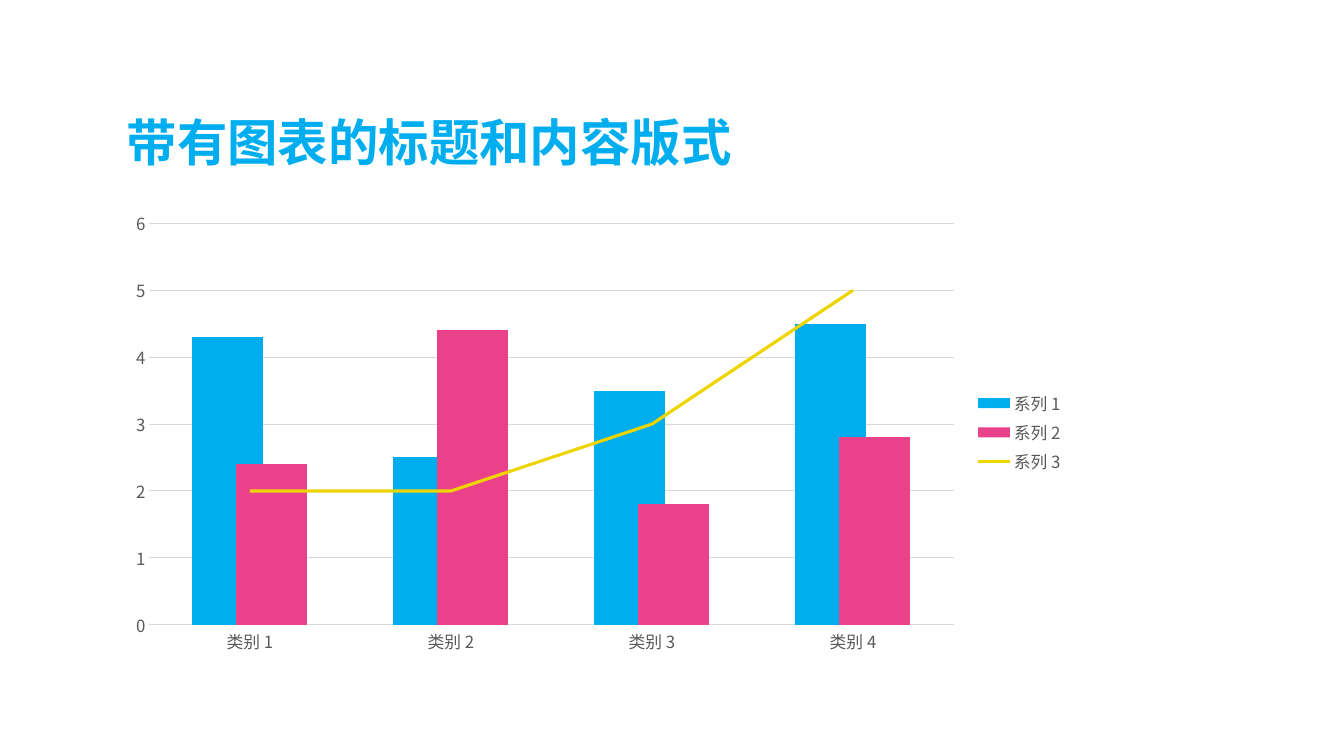
"""Build a slide with a title above a combined column and line chart."""
from dataclasses import dataclass

from lxml import etree
from pptx import Presentation
from pptx import util as u
from pptx.chart import data
from pptx.chart.chart import Chart
from pptx.dml.color import RGBColor
from pptx.enum import chart as ch
from pptx.enum import text
from pptx.oxml.ns import qn
from pptx.oxml.xmlchemy import OxmlElement
from pptx.slide import Slide
from pptx.text.text import Font

TYPEFACE = "Noto Sans CJK SC"
BLUE = RGBColor(0x00, 0xAE, 0xEF)
PINK = RGBColor(0xEA, 0x42, 0x8A)
YELLOW = RGBColor(0xEE, 0xD5, 0x00)
LABEL_GREY = RGBColor(0x59, 0x59, 0x59)
GRID_GREY = RGBColor(0xD9, 0xD9, 0xD9)

LEFT = u.Pt(83.5)
WIDTH = u.Pt(684)


@dataclass(frozen=True)
class Measure:
    name: str
    values: tuple[float, ...]
    color: RGBColor


CATEGORIES = [f"类别 {number}" for number in range(1, 5)]
COLUMNS = [
    Measure("系列 1", (4.3, 2.5, 3.5, 4.5), BLUE),
    Measure("系列 2", (2.4, 4.4, 1.8, 2.8), PINK),
]
TREND = Measure("系列 3", (2, 2, 3, 5), YELLOW)


def style_font(font: Font, size: float, color: RGBColor) -> None:
    font.name = TYPEFACE
    font.size = u.Pt(size)
    font.color.rgb = color


def add_east_asian_typeface(root: etree.ElementBase) -> None:
    for latin in list(root.iter(qn("a:latin"))):
        east_asian = OxmlElement("a:ea")
        east_asian.set("typeface", TYPEFACE)
        latin.addnext(east_asian)


def add_title(slide: Slide, wording: str) -> None:
    title = slide.shapes.add_textbox(LEFT, u.Pt(41.75), WIDTH, u.Pt(84.25))
    frame = title.text_frame
    frame.word_wrap = True
    frame.vertical_anchor = text.MSO_ANCHOR.BOTTOM
    paragraph = frame.paragraphs[0]
    paragraph.line_spacing = 0.8
    run = paragraph.add_run()
    run.text = wording
    run.font.bold = True
    style_font(run.font, 36, BLUE)
    add_east_asian_typeface(title.element)


def append_value(parent: etree.ElementBase, tag: str, value: str) -> None:
    child = OxmlElement(tag)
    child.set("val", value)
    parent.append(child)


def move_last_series_to_line(chart: Chart) -> None:
    bar_plot = next(chart.element.iter(qn("c:barChart")))
    trend = bar_plot.findall(qn("c:ser"))[-1]
    for bar_setting in trend.findall(qn("c:invertIfNegative")):
        trend.remove(bar_setting)
    line_plot = OxmlElement("c:lineChart")
    bar_plot.addnext(line_plot)
    append_value(line_plot, "c:grouping", "standard")
    append_value(line_plot, "c:varyColors", "0")
    line_plot.append(trend)
    append_value(line_plot, "c:marker", "1")
    for axis_id in bar_plot.findall(qn("c:axId")):
        append_value(line_plot, "c:axId", axis_id.get("val"))


def style_axes(chart: Chart) -> None:
    for axis in (chart.category_axis, chart.value_axis):
        axis.major_tick_mark = ch.XL_TICK_MARK.NONE
        axis.minor_tick_mark = ch.XL_TICK_MARK.NONE
        style_font(axis.tick_labels.font, 12, LABEL_GREY)
    values = chart.value_axis
    values.minimum_scale, values.maximum_scale, values.major_unit = 0, 6, 1
    values.has_major_gridlines = True
    values.format.line.fill.background()
    for line in (chart.category_axis.format.line, values.major_gridlines.format.line):
        line.color.rgb = GRID_GREY
        line.width = u.Pt(0.75)


def add_combined_chart(slide: Slide) -> None:
    chart_data = data.CategoryChartData()
    chart_data.categories = CATEGORIES
    for measure in [*COLUMNS, TREND]:
        chart_data.add_series(measure.name, measure.values)
    chart = slide.shapes.add_chart(
        ch.XL_CHART_TYPE.COLUMN_CLUSTERED, LEFT, u.Pt(144), WIDTH, u.Pt(329.75), chart_data
    ).chart
    chart.has_title = False
    style_font(chart.font, 10, RGBColor(0, 0, 0))
    move_last_series_to_line(chart)

    columns, trend_plot = chart.plots
    columns.vary_by_categories = False
    columns.gap_width = 121
    columns.overlap = 38
    for series, measure in zip(columns.series, COLUMNS):
        series.format.fill.solid()
        series.format.fill.fore_color.rgb = measure.color

    trend = trend_plot.series[0]
    trend.smooth = False
    trend.marker.style = ch.XL_MARKER_STYLE.NONE
    trend.format.line.color.rgb = TREND.color
    trend.format.line.width = u.Pt(2.25)

    style_axes(chart)
    chart.has_legend = True
    chart.legend.position = ch.XL_LEGEND_POSITION.RIGHT
    chart.legend.include_in_layout = False
    style_font(chart.legend.font, 12, LABEL_GREY)
    add_east_asian_typeface(chart.element)


def main() -> None:
    deck = Presentation()
    deck.slide_width, deck.slide_height = u.Pt(960), u.Pt(540)
    slide = deck.slides.add_slide(deck.slide_layouts[6])
    add_title(slide, "带有图表的标题和内容版式")
    add_combined_chart(slide)
    deck.save("out.pptx")


if __name__ == "__main__":
    main()
